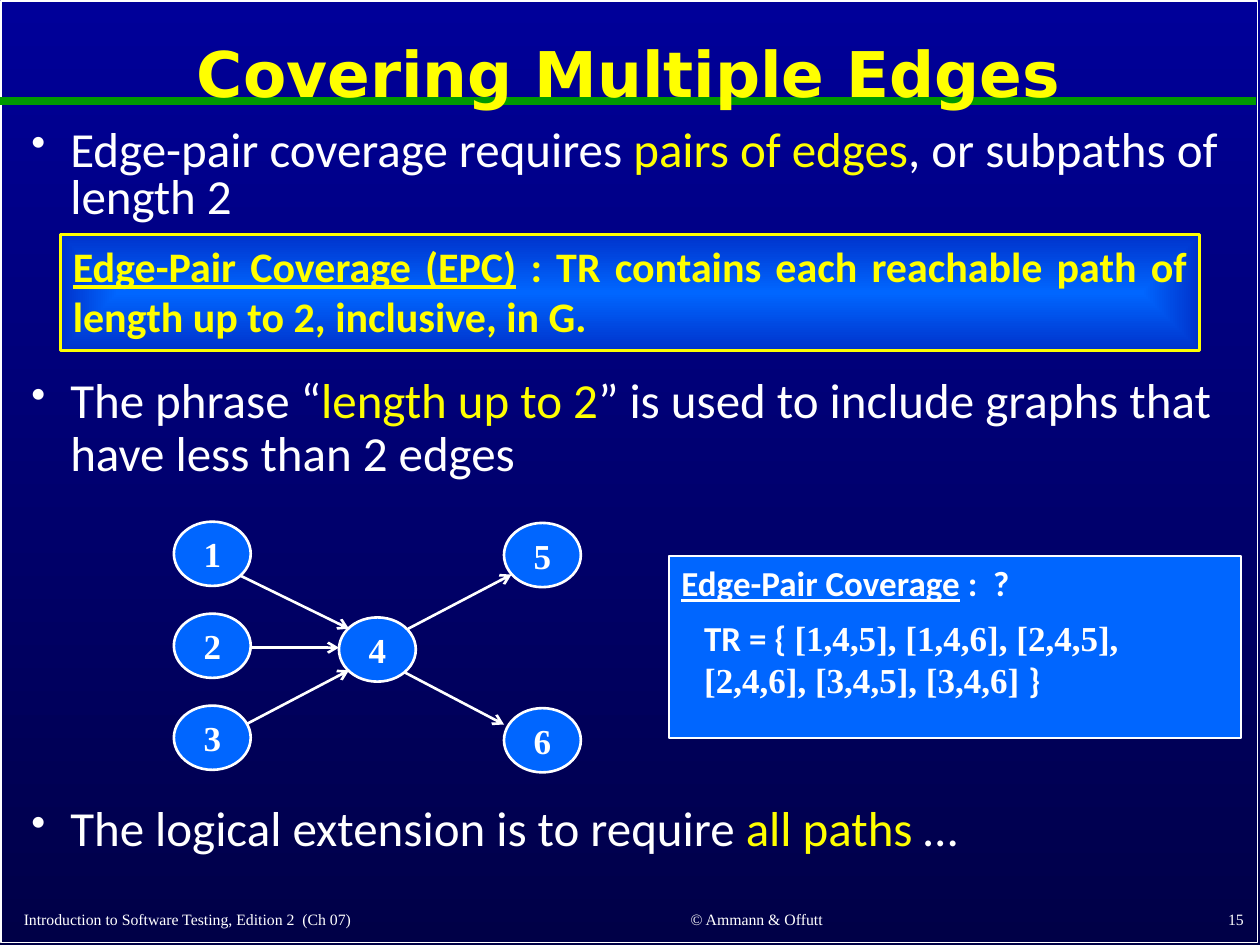
from dataclasses import dataclass

from pptx import Presentation
from pptx.dml.color import RGBColor
from pptx.enum.shapes import MSO_CONNECTOR, MSO_SHAPE
from pptx.enum.text import MSO_ANCHOR, MSO_AUTO_SIZE, PP_ALIGN
from pptx.oxml.ns import qn
from pptx.util import Inches, Pt
from lxml.etree import SubElement

COLORS = {
    "white": "FFFFFF", "yellow": "FFFF00", "green": "009900",
    "blue": "0066FF", "deep": "0033CC", "top": "000099", "bottom": "000047",
}
SERIF, SANS = "Times New Roman", "Calibri"


@dataclass
class Node:
    label: str
    x: float
    y: float


@dataclass
class Edge:
    x1: float
    y1: float
    x2: float
    y2: float


@dataclass
class Bullet:
    y: float
    h: float
    spacing: float
    phrases: tuple  # plain, highlighted, plain


@dataclass
class Footer:
    text: str
    x: float
    y: float
    w: float
    h: float
    align: PP_ALIGN


NODE_W, NODE_H = 0.61, 0.51
NODES = [
    *(Node(str(i + 1), 1.38, 4.14 + 0.73 * i) for i in range(3)),
    Node("4", 2.69, 4.9), Node("5", 4, 4.15), Node("6", 4, 5.62),
]
EDGES = [
    Edge(1.89, 4.56, 2.77, 4.99), Edge(1.99, 5.14, 2.69, 5.14),
    Edge(1.95, 5.75, 2.77, 5.32), Edge(3.24, 4.99, 4.06, 4.56),
    Edge(3.18, 5.32, 4, 5.75),
]
BULLETS = [
    Bullet(0.98, 0.73, 0.8, ("Edge-pair coverage requires ", "pairs of edges",
                             ", or subpaths of length 2")),
    Bullet(2.94, 0.83, 0.9, ("The phrase “", "length up to 2",
                             "” is used to include graphs that have less than 2 edges")),
    Bullet(6.33, 0.48, 0.9, ("The logical extension is to require ", "all paths", " …")),
]
FOOTERS = [
    Footer("Introduction to Software Testing, Edition 2  (Ch 07)",
           0.09, 7.12, 4.12, 0.3, PP_ALIGN.LEFT),
    Footer("© Ammann & Offutt", 4.42, 7.11, 3.17, 0.31, PP_ALIGN.CENTER),
    Footer("15", 7.89, 7.1, 2.08, 0.32, PP_ALIGN.RIGHT),
]


def rgb(name: str) -> RGBColor:
    return RGBColor.from_string(COLORS[name])


def add_run(p, text: str, size: float, font: str = SANS, color: str = "white", **fmt) -> None:
    r = p.add_run()
    r.text = text
    for key, value in {"name": font, "size": Pt(size), **fmt}.items():
        setattr(r.font, key, value)
    r.font.color.rgb = rgb(color)


def set_gradient(fill, start: str, end: str) -> None:
    fill.gradient()
    for stop, color, pos in zip(fill.gradient_stops, (start, end), (0, 1)):
        stop.color.rgb = rgb(color)
        stop.position = pos


def add_box(s, x, y, w, h, line="white", width=1.0, fill=None, kind=MSO_SHAPE.RECTANGLE):
    sp = s.shapes.add_shape(kind, Inches(x), Inches(y), Inches(w), Inches(h))
    sp.shadow.inherit = False
    if fill:
        sp.fill.solid()
        sp.fill.fore_color.rgb = rgb(fill)
    else:
        sp.fill.background()
    sp.line.color.rgb = rgb(line)
    sp.line.width = Pt(width)
    tf = sp.text_frame
    tf.word_wrap = True
    tf.vertical_anchor = MSO_ANCHOR.TOP
    tf.paragraphs[0].alignment = PP_ALIGN.LEFT
    return sp


def add_text(s, x, y, w, h, anchor=MSO_ANCHOR.TOP):
    tf = s.shapes.add_textbox(Inches(x), Inches(y), Inches(w), Inches(h)).text_frame
    tf.word_wrap = True
    tf.vertical_anchor = anchor
    return tf.paragraphs[0]


def add_line(s, edge: Edge, color="white", width=1.5, arrow=True) -> None:
    c = s.shapes.add_connector(MSO_CONNECTOR.STRAIGHT, Inches(edge.x1), Inches(edge.y1),
                               Inches(edge.x2), Inches(edge.y2))
    c.line.color.rgb = rgb(color)
    c.line.width = Pt(width)
    if arrow:
        SubElement(c._element.spPr.find(qn("a:ln")), qn("a:tailEnd"), type="arrow")
    SubElement(c._element.spPr, qn("a:effectLst"))


def add_bullet(s, b: Bullet) -> None:
    p = add_text(s, 0.15, b.y, 9.7, b.h)
    p.line_spacing = b.spacing
    pPr = p._p.get_or_add_pPr()
    pPr.set("marL", str(Inches(0.31)))
    pPr.set("indent", str(Inches(-0.31)))
    SubElement(pPr, qn("a:buSzPct"), val="85000")
    SubElement(pPr, qn("a:buChar"), char="•")
    for text, color in zip(b.phrases, ("white", "yellow", "white")):
        add_run(p, text, 28, color=color)


def add_node(s, n: Node) -> None:
    sp = add_box(s, n.x, n.y, NODE_W, NODE_H, width=1.5, fill="blue", kind=MSO_SHAPE.OVAL)
    tf = sp.text_frame
    tf.word_wrap = False
    tf.vertical_anchor = MSO_ANCHOR.MIDDLE
    tf.paragraphs[0].alignment = PP_ALIGN.CENTER
    add_run(tf.paragraphs[0], n.label, 20, SERIF, bold=True)


def add_title(s, text: str) -> None:
    title = s.shapes.title
    box = {"left": 0.09, "top": 0.11, "width": 9.8, "height": 1}
    for key, value in box.items():
        setattr(title, key, Inches(value))
    tf = title.text_frame
    tf.auto_size = MSO_AUTO_SIZE.NONE
    tf.vertical_anchor = MSO_ANCHOR.MIDDLE
    p = tf.paragraphs[0]
    p.alignment = PP_ALIGN.CENTER
    p.line_spacing = 0.9
    add_run(p, text, 36, "DejaVu Sans", "yellow", bold=True)
    s.shapes._spTree.append(title._element)  # in front of the green rule


def add_definition(s) -> None:
    sp = add_box(s, 0.48, 1.86, 9.04, 0.92, "yellow", 1.5)
    set_gradient(sp.fill, "blue", "deep")
    grad = sp._element.spPr.find(qn("a:gradFill"))
    grad.remove(grad.find(qn("a:lin")))
    radial = SubElement(grad, qn("a:path"), {"path": "shape"})
    SubElement(radial, qn("a:fillToRect"), dict.fromkeys("ltrb", "50000"))
    p = sp.text_frame.paragraphs[0]
    p.alignment = PP_ALIGN.JUSTIFY
    add_run(p, "Edge-Pair Coverage (EPC)", 24, color="yellow", bold=True, underline=True)
    add_run(p, " : TR contains each reachable path of length up to 2, inclusive, in G.",
            24, color="yellow", bold=True)


def add_answer(s) -> None:
    p = add_box(s, 5.31, 4.41, 4.54, 1.45, fill="blue").text_frame.paragraphs[0]
    add_run(p, "Edge-Pair Coverage", 20, bold=True, underline=True)
    add_run(p, " :  ?", 20, bold=True)
    p = add_text(s, 5.49, 4.84, 4.03, 0.77)
    add_run(p, "TR = { ", 20, bold=True)
    add_run(p, "[1,4,5], [1,4,6], [2,4,5], [2,4,6], [3,4,5], [3,4,6] ", 20, SERIF, bold=True)
    add_run(p, "}", 20, bold=True)


def main() -> None:
    prs = Presentation()
    prs.slide_width, prs.slide_height = Inches(10), Inches(7.5)
    s = prs.slides.add_slide(prs.slide_layouts[5])

    # Background, frame and rule
    background = s.background.fill
    set_gradient(background, "top", "bottom")
    background.gradient_angle = 270
    add_box(s, 0.01, 0.01, 9.97, 7.47)
    add_line(s, Edge(0, 0.8, 9.97, 0.8), "green", 4.5, arrow=False)

    # Title, footers and body text
    add_title(s, "Covering Multiple Edges")
    for f in FOOTERS:
        p = add_text(s, f.x, f.y, f.w, f.h, MSO_ANCHOR.BOTTOM)
        p.alignment = f.align
        add_run(p, f.text, 9, SERIF)
    for b in BULLETS:
        add_bullet(s, b)
    add_definition(s)

    # Graph and its test requirements
    for edge in EDGES:
        add_line(s, edge)
    for node in NODES:
        add_node(s, node)
    add_answer(s)

    prs.save("out.pptx")


if __name__ == "__main__":
    main()
